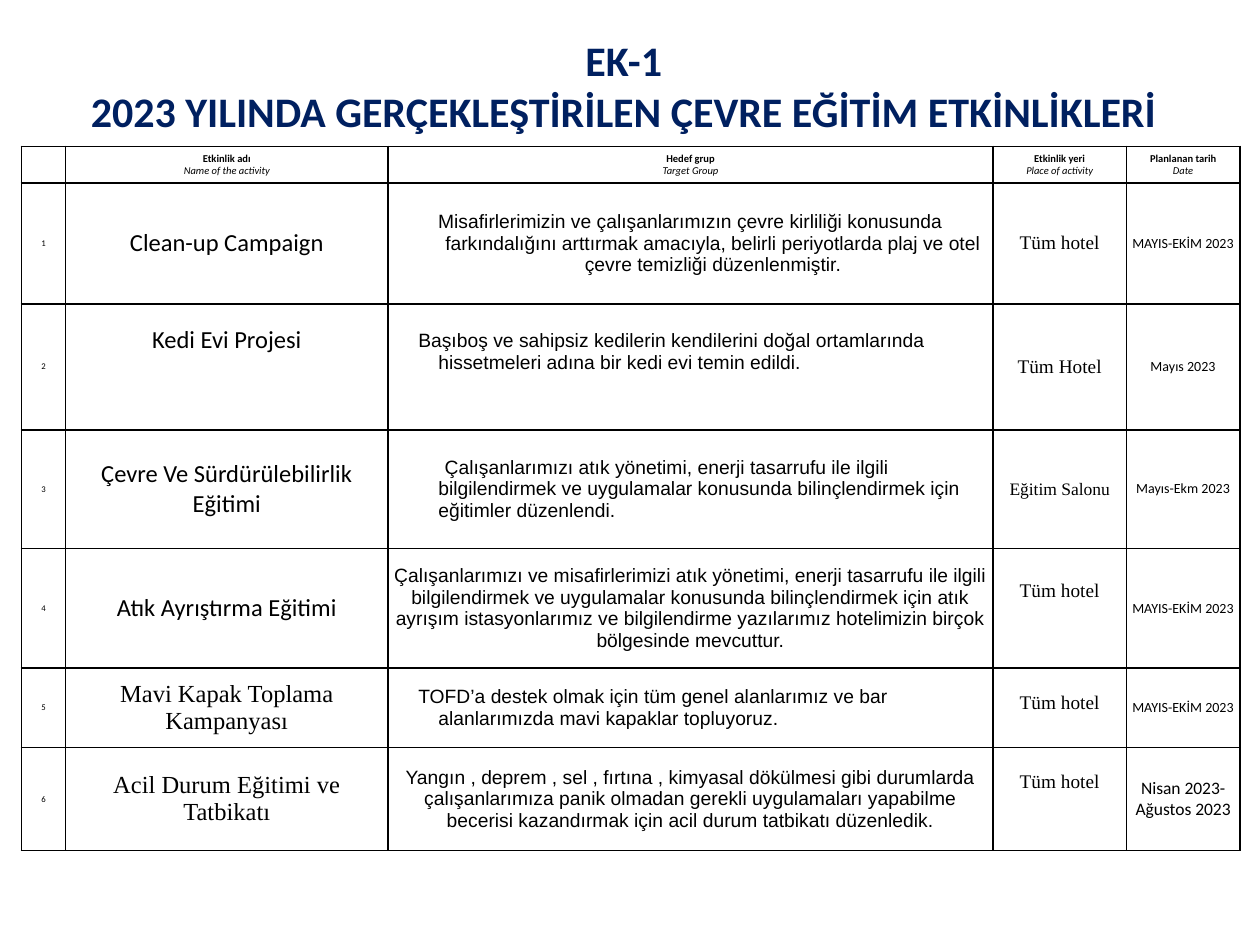
from lxml.etree import SubElement
from pptx import Presentation
from pptx.dml.color import RGBColor
from pptx.enum.text import MSO_ANCHOR, PP_ALIGN
from pptx.oxml.ns import qn
from pptx.util import Inches, Pt

COLORS = {"title": "002060", "text": "000000", "border": "000000"}
SANS, BODY, SERIF = "Calibri", "Arial", "Times New Roman"
INSET_X, INSET_Y = 0.04, 0.02

COLUMNS = [0.35, 2.56, 4.8, 1.06, 0.9]
ROWS = [0.29, 0.96, 1, 0.94, 0.95, 0.63, 0.82]
HEADERS = [
    ("Etkinlik adı", "Name of the activity"),
    ("Hedef grup", "Target Group"),
    ("Etkinlik yeri", "Place of activity"),
    ("Planlanan tarih", "Date"),
]

# Each activity holds (text, changed styling) for name, target group, place, date
ACTIVITIES = [
    [("Clean-up Campaign", {}),
     ("Misafirlerimizin ve çalışanlarımızın çevre kirliliği konusunda "
      "farkındalığını arttırmak amacıyla, belirli periyotlarda plaj ve otel "
      "çevre temizliği düzenlenmiştir.", {"indent": (0.36, -0.36)}),
     ("Tüm hotel", {}),
     ("MAYIS-EKİM 2023", {})],
    [("Kedi Evi Projesi", {"lift": 0.42}),
     ("Başıboş ve sahipsiz kedilerin kendilerini doğal ortamlarında "
      "hissetmeleri adına bir kedi evi temin edildi.",
      {"align": PP_ALIGN.LEFT, "indent": (0.36, -0.16), "lift": 0.24}),
     ("Tüm Hotel", {}),
     ("Mayıs 2023", {})],
    [("Çevre Ve Sürdürülebilirlik Eğitimi", {}),
     ("Çalışanlarımızı atık yönetimi, enerji tasarrufu ile ilgili "
      "bilgilendirmek ve uygulamalar konusunda bilinçlendirmek için "
      "eğitimler düzenlendi.",
      {"align": PP_ALIGN.LEFT, "indent": (0.36, 0.05)}),
     ("Eğitim Salonu", {"size": 10}),
     ("Mayıs-Ekm 2023", {})],
    [("Atık Ayrıştırma Eğitimi", {}),
     ("Çalışanlarımızı ve misafirlerimizi atık yönetimi, enerji tasarrufu ile "
      "ilgili bilgilendirmek ve uygulamalar konusunda bilinçlendirmek için "
      "atık ayrışım istasyonlarımız ve bilgilendirme yazılarımız hotelimizin "
      "birçok bölgesinde mevcuttur.", {}),
     ("Tüm hotel", {"lift": 0.27}),
     ("MAYIS-EKİM 2023", {})],
    [("Mavi Kapak Toplama Kampanyası", {"font": SERIF}),
     ("TOFD’a destek olmak için tüm genel alanlarımız ve bar alanlarımızda "
      "mavi kapaklar topluyoruz.",
      {"align": PP_ALIGN.LEFT, "indent": (0.36, -0.16)}),
     ("Tüm hotel", {"lift": 0.08}),
     ("MAYIS-EKİM 2023", {})],
    [("Acil Durum Eğitimi ve Tatbikatı", {"font": SERIF}),
     ("Yangın , deprem , sel , fırtına , kimyasal dökülmesi gibi durumlarda "
      "çalışanlarımıza panik olmadan gerekli uygulamaları yapabilme becerisi "
      "kazandırmak için acil durum tatbikatı düzenledik.", {}),
     ("Tüm hotel", {"lift": 0.27}),
     ("Nisan 2023-Ağustos 2023", {"size": 10})],
]
COLUMN_STYLES = [
    {"font": SANS, "size": 14},
    {"font": BODY, "size": 11},
    {"font": SERIF, "size": 11},
    {"font": SANS, "size": 8},
]


class SlideBuilder:
    """Holds the current slide and the shared style."""

    def __init__(self, prs):
        self.prs = prs
        self.s = prs.slides.add_slide(prs.slide_layouts[5])

    def box(self, x, y, w, h):
        """Turn shares of the slide's size into lengths."""
        sw, sh = self.prs.slide_width, self.prs.slide_height
        return int(x * sw), int(y * sh), int(w * sw), int(h * sh)

    def format(self, p, font, size, color="text", bold=False, italic=False,
               align=PP_ALIGN.CENTER):
        p.alignment = align
        for r in p.runs:
            r.font.name, r.font.size = font, Pt(size)
            r.font.bold, r.font.italic = bold, italic
            r.font.color.rgb = RGBColor.from_string(COLORS[color])

    def title(self, lines, *shares):
        sp = self.s.shapes.title
        sp.left, sp.top, sp.width, sp.height = self.box(*shares)
        tf = sp.text_frame
        tf.text = "\n".join(lines)
        tf.word_wrap = False
        tf.vertical_anchor = MSO_ANCHOR.MIDDLE
        for p in tf.paragraphs:
            self.format(p, SANS, 24, "title", bold=True)

    def table(self, columns, rows, *shares):
        frame = self.s.shapes.add_table(len(rows), len(columns),
                                        *self.box(*shares))
        table = frame.table
        table.first_row = table.horz_banding = False
        for column, width in zip(table.columns, columns):
            column.width = Inches(width)
        for row, height in zip(table.rows, rows):
            row.height = Inches(height)
        for cell in table.iter_cells():
            self.frame_cell(cell)
        return table

    def frame_cell(self, cell):
        """Draw the cell's four borders and clear its fill."""
        tcPr = cell._tc.get_or_add_tcPr()
        for side in ("a:lnL", "a:lnR", "a:lnT", "a:lnB"):
            ln = SubElement(tcPr, qn(side), w=str(Pt(1)))
            fill = SubElement(ln, qn("a:solidFill"))
            SubElement(fill, qn("a:srgbClr"), val=COLORS["border"])
        cell.fill.background()
        cell.vertical_anchor = MSO_ANCHOR.MIDDLE
        cell.margin_left = cell.margin_right = Inches(INSET_X)
        cell.margin_top = cell.margin_bottom = Inches(INSET_Y)

    def header(self, cell, name, translation):
        cell.text_frame.text = f"{name}\n{translation}"
        first, second = cell.text_frame.paragraphs
        self.format(first, SANS, 6, bold=True)
        self.format(second, SANS, 6, italic=True)

    def cell(self, cell, text, lift=0, indent=None, **style):
        cell.text_frame.text = text
        cell.margin_bottom = Inches(INSET_Y + lift)
        p = cell.text_frame.paragraphs[0]
        self.format(p, **style)
        if indent:
            left, first_line = indent
            pPr = p._p.get_or_add_pPr()
            pPr.set("marL", str(Inches(left)))
            pPr.set("indent", str(Inches(first_line)))

    def empty_cell(self, cell, size):
        """Keep an empty cell from stretching its row."""
        p = cell.text_frame.paragraphs[0]
        SubElement(p._p, qn("a:endParaRPr"), sz=str(size * 100))


def main():
    prs = Presentation()
    prs.slide_width, prs.slide_height = Inches(10), Inches(7.5)
    builder = SlideBuilder(prs)

    # Title
    builder.title(["EK-1",
                   "2023 YILINDA GERÇEKLEŞTİRİLEN ÇEVRE EĞİTİM ETKİNLİKLERİ"],
                  0.06, 0.03, 0.87, 0.12)

    # Table with its header row
    table = builder.table(COLUMNS, ROWS, 0.017, 0.155, 0.967, 0.745)
    builder.empty_cell(table.cell(0, 0), 6)
    for col, names in enumerate(HEADERS, start=1):
        builder.header(table.cell(0, col), *names)

    # One numbered row per activity
    for row, activity in enumerate(ACTIVITIES, start=1):
        builder.cell(table.cell(row, 0), str(row), font=SANS, size=5)
        for col, (text, changes) in enumerate(activity, start=1):
            style = {**COLUMN_STYLES[col - 1], **changes}
            builder.cell(table.cell(row, col), text, **style)

    prs.save("out.pptx")


if __name__ == "__main__":
    main()
